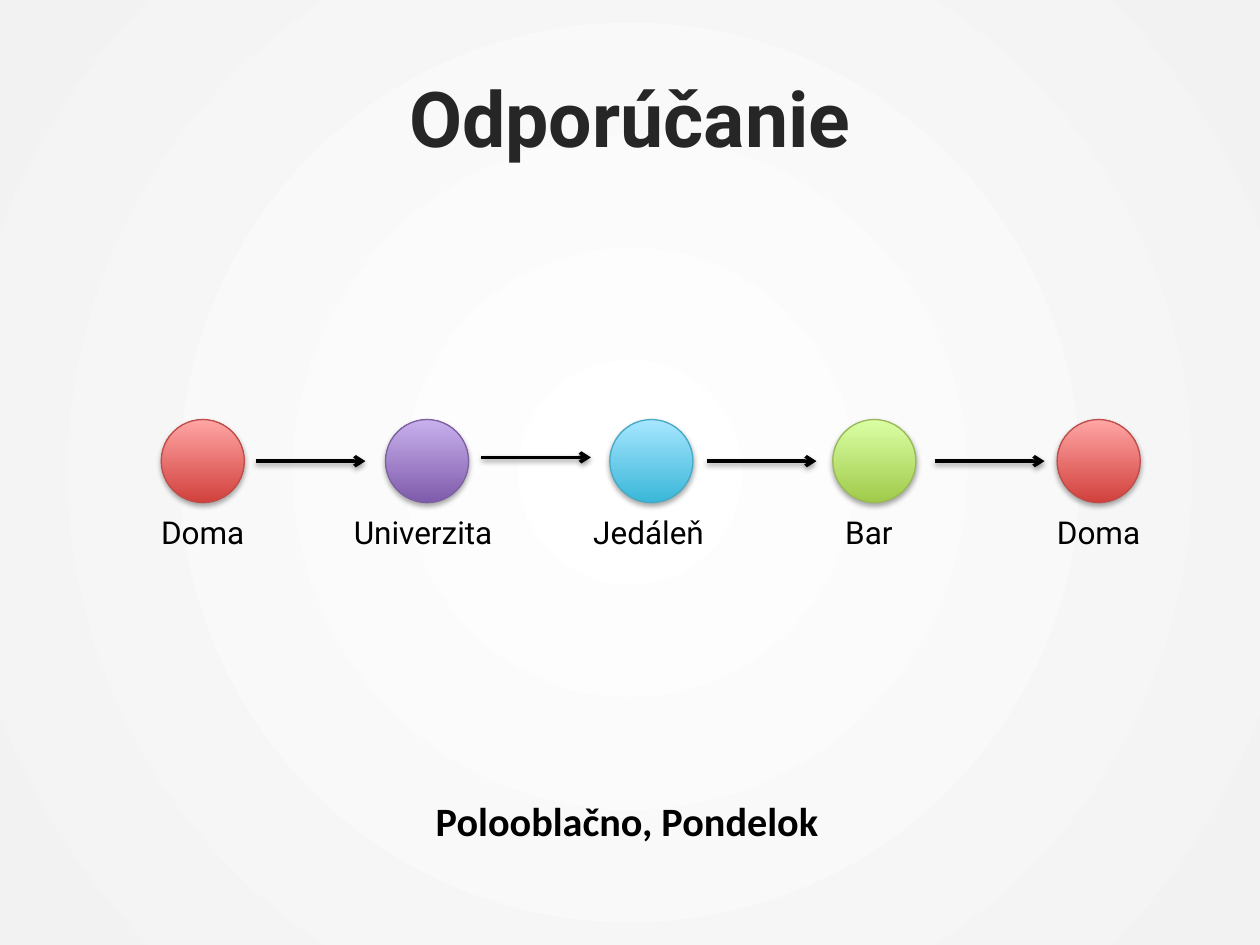
from typing import NamedTuple

from lxml.etree import SubElement
from pptx import Presentation
from pptx.dml.color import RGBColor
from pptx.enum.shapes import MSO_CONNECTOR, MSO_SHAPE
from pptx.enum.text import MSO_ANCHOR, MSO_AUTO_SIZE, PP_ALIGN
from pptx.oxml.ns import qn
from pptx.util import Pt

PX = 9144  # EMU in one px, at 100 px to the inch
START, PITCH, TOP, SIZE = 128, 177.75, 333, 66
LABEL_TOP, LABEL_HIGH, ARROW_LONG = 402, 40, 87

BLACK = RGBColor(0, 0, 0)
DARK = RGBColor(0x26, 0x26, 0x26)
WHITE = RGBColor(0xFF, 0xFF, 0xFF)
PALE = RGBColor(0xF2, 0xF2, 0xF2)


class Tone(NamedTuple):
    low: RGBColor
    high: RGBColor
    edge: RGBColor


class Stop(NamedTuple):
    name: str
    tone: Tone
    left: int  # label position
    wide: int


class Arrow(NamedTuple):
    x: int
    y: int


def tone(*codes: str) -> Tone:
    return Tone(*map(RGBColor.from_string, codes))


RED = tone("D1403C", "FFA6A5", "BF4C48")
VIOLET = tone("7F5BAB", "C8B0ED", "7D60A0")
BLUE = tone("39B7D8", "A7E6FF", "46AAC5")
GREEN = tone("A0CA4A", "DAFFA5", "98B955")

STOPS = [
    Stop("Doma", RED, 118, 87),
    Stop("Univerzita", VIOLET, 271, 137),
    Stop("Jedáleň", BLUE, 461, 109),
    Stop("Bar", GREEN, 661, 59),
    Stop("Doma", RED, 829, 87),
]
ARROWS = [Arrow(203, 366), Arrow(382, 363), Arrow(561, 366), Arrow(742, 366)]

HEAD = {"name": "Roboto", "size": Pt(44), "bold": True}
LABEL = {"name": "Roboto", "size": Pt(18), "bold": False}
NOTE = {"name": "Calibri", "size": Pt(23), "bold": True}


def px(*values: float) -> list[int]:
    return [round(value) * PX for value in values]


def style(font, form: dict, color: RGBColor = BLACK) -> None:
    for key, value in form.items():
        setattr(font, key, value)
    font.color.rgb = color


def blend(fill, low: RGBColor, high: RGBColor) -> None:
    fill.gradient()
    for stop, color in zip(fill.gradient_stops, (low, high)):
        stop.color.rgb = color


def shade(shape, drop: int, alpha: int) -> None:
    """Cast a soft shadow straight down; call after the line is set."""
    effects = SubElement(shape.element.spPr, qn("a:effectLst"))
    shadow = SubElement(effects, qn("a:outerShdw"), blurRad="40000",
                        dist=str(drop), dir="5400000", rotWithShape="0")
    color = SubElement(shadow, qn("a:srgbClr"), val=str(BLACK))
    SubElement(color, qn("a:alpha"), val=str(alpha * 1000))


def paint(slide) -> None:
    """Fill the background with a gradient that spreads from the centre."""
    blend(slide.background.fill, WHITE, PALE)
    grad = slide.element.find(".//" + qn("a:gradFill"))
    outer = grad.findall(".//" + qn("a:srgbClr"))[-1]
    SubElement(outer, qn("a:alpha"), val="30000")
    grad.remove(grad.find(qn("a:lin")))
    ring = SubElement(grad, qn("a:path"), path="circle")
    SubElement(ring, qn("a:fillToRect"),
               {side: "50000" for side in "ltrb"})


def write(slide, text: str, box: tuple, form: dict) -> None:
    frame = slide.shapes.add_textbox(*px(*box)).text_frame
    frame.word_wrap = False
    frame.auto_size = MSO_AUTO_SIZE.SHAPE_TO_FIT_TEXT
    run = frame.paragraphs[0].add_run()
    run.text = text
    style(run.font, form)


def draw_stop(slide, index: int, stop: Stop) -> None:
    box = px(START + PITCH * index, TOP, SIZE, SIZE)
    ball = slide.shapes.add_shape(MSO_SHAPE.OVAL, *box)
    blend(ball.fill, stop.tone.low, stop.tone.high)
    ball.fill.gradient_angle = 90
    ball.line.color.rgb = stop.tone.edge
    ball.line.width = Pt(0.75)
    shade(ball, 23000, 35)
    write(slide, stop.name, (stop.left, LABEL_TOP, stop.wide, LABEL_HIGH), LABEL)


def draw_arrow(slide, arrow: Arrow) -> None:
    ends = px(arrow.x, arrow.y, arrow.x + ARROW_LONG, arrow.y)
    link = slide.shapes.add_connector(MSO_CONNECTOR.STRAIGHT, *ends)
    link.line.color.rgb = BLACK
    link.line.width = Pt(2)
    SubElement(link.element.spPr.find(qn("a:ln")), qn("a:tailEnd"), type="arrow")
    shade(link, 20000, 38)


def main() -> None:
    deck = Presentation()
    deck.slide_width, deck.slide_height = px(1000, 750)
    slide = deck.slides.add_slide(deck.slide_layouts[5])
    paint(slide)

    title = slide.shapes.title
    title.left, title.top, title.width, title.height = px(50, 30, 900, 125)
    title.text_frame.text = "Odporúčanie"
    title.text_frame.vertical_anchor = MSO_ANCHOR.MIDDLE
    line = title.text_frame.paragraphs[0]
    line.alignment = PP_ALIGN.CENTER
    style(line.runs[0].font, HEAD, DARK)

    write(slide, "Polooblačno, Pondelok", (336, 627, 328, 49), NOTE)
    for index, stop in enumerate(STOPS):
        draw_stop(slide, index, stop)
    for arrow in ARROWS:
        draw_arrow(slide, arrow)
    deck.save("out.pptx")


if __name__ == "__main__":
    main()
